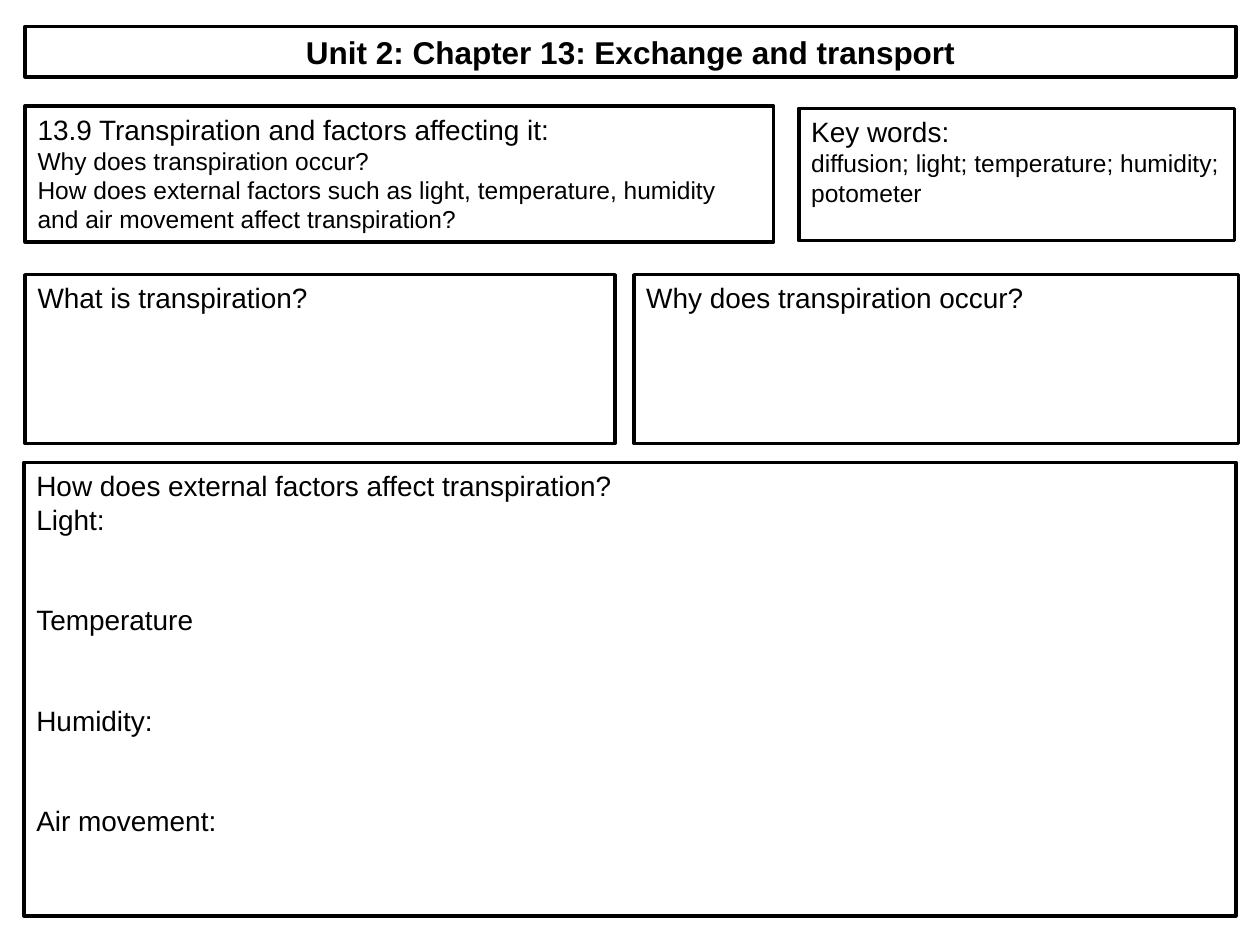
import pptx
import pptx.util
import pptx.dml.color
import pptx.enum.shapes
import pptx.enum.text

Pt = pptx.util.Pt
COLORS = {"ink": "000000", "paper": "FFFFFF"}
HEAD, BODY = 16, 14  # text sizes
GAP = 38.3  # two lines of writing room


def color(name):
    return pptx.dml.color.RGBColor.from_string(COLORS[name])


def add_box(slide, left, top, width, height):
    """Add an outlined box and return its text frame."""
    box = slide.shapes.add_shape(
        pptx.enum.shapes.MSO_SHAPE.RECTANGLE,
        Pt(left), Pt(top), Pt(width), Pt(height))
    box.shadow.inherit = False
    box.fill.solid()
    box.fill.fore_color.rgb = color("paper")
    box.line.color.rgb = color("ink")
    box.line.width = Pt(2)
    frame = box.text_frame
    frame.word_wrap = True
    frame.vertical_anchor = pptx.enum.text.MSO_ANCHOR.TOP
    return frame


def add_text(frame, lines, sizes, align="LEFT", bold=False):
    """Write one paragraph for each line; the last size repeats."""
    for i, line in enumerate(lines):
        para = frame.add_paragraph() if i else frame.paragraphs[0]
        para.text = line
        para.alignment = getattr(pptx.enum.text.PP_ALIGN, align)
        para.font.name = "Arial"
        para.font.size = Pt(sizes[min(i, len(sizes) - 1)])
        para.font.bold = bold
        para.font.color.rgb = color("ink")


def main():
    deck = pptx.Presentation()
    deck.slide_width, deck.slide_height = Pt(720), Pt(540)
    slide = deck.slides.add_slide(deck.slide_layouts[6])

    # Title
    title = add_box(slide, 14.4, 15.1, 691.9, 28.8)
    add_text(title, ["Unit 2: Chapter 13: Exchange and transport"],
             [18], "CENTER", True)

    # Topic and key words
    topic = add_box(slide, 14.4, 60.5, 427.7, 77.8)
    add_text(topic, [
        "13.9 Transpiration and factors affecting it:",
        "Why does transpiration occur?",
        "How does external factors such as light, temperature, humidity "
        "and air movement affect transpiration?"], [HEAD, BODY])
    words = add_box(slide, 456.5, 61.9, 249.1, 75.6)
    add_text(words, [
        "Key words:",
        "diffusion; light; temperature; humidity; potometer"], [HEAD, BODY])

    # Question boxes
    for left, width, ask in [(14.4, 337, "What is transpiration?"),
                             (362.2, 345.6, "Why does transpiration occur?")]:
        add_text(add_box(slide, left, 157, width, 96.5), [ask], [HEAD])

    # External factors, with writing room between them
    factors = add_box(slide, 13.7, 264.2, 692.6, 259.2)
    add_text(factors, [
        "How does external factors affect transpiration?",
        "Light:", "Temperature", "Humidity:", "Air movement:"], [HEAD])
    for para in factors.paragraphs[2:]:
        para.space_before = Pt(GAP)

    deck.save("out.pptx")


if __name__ == "__main__":
    main()
